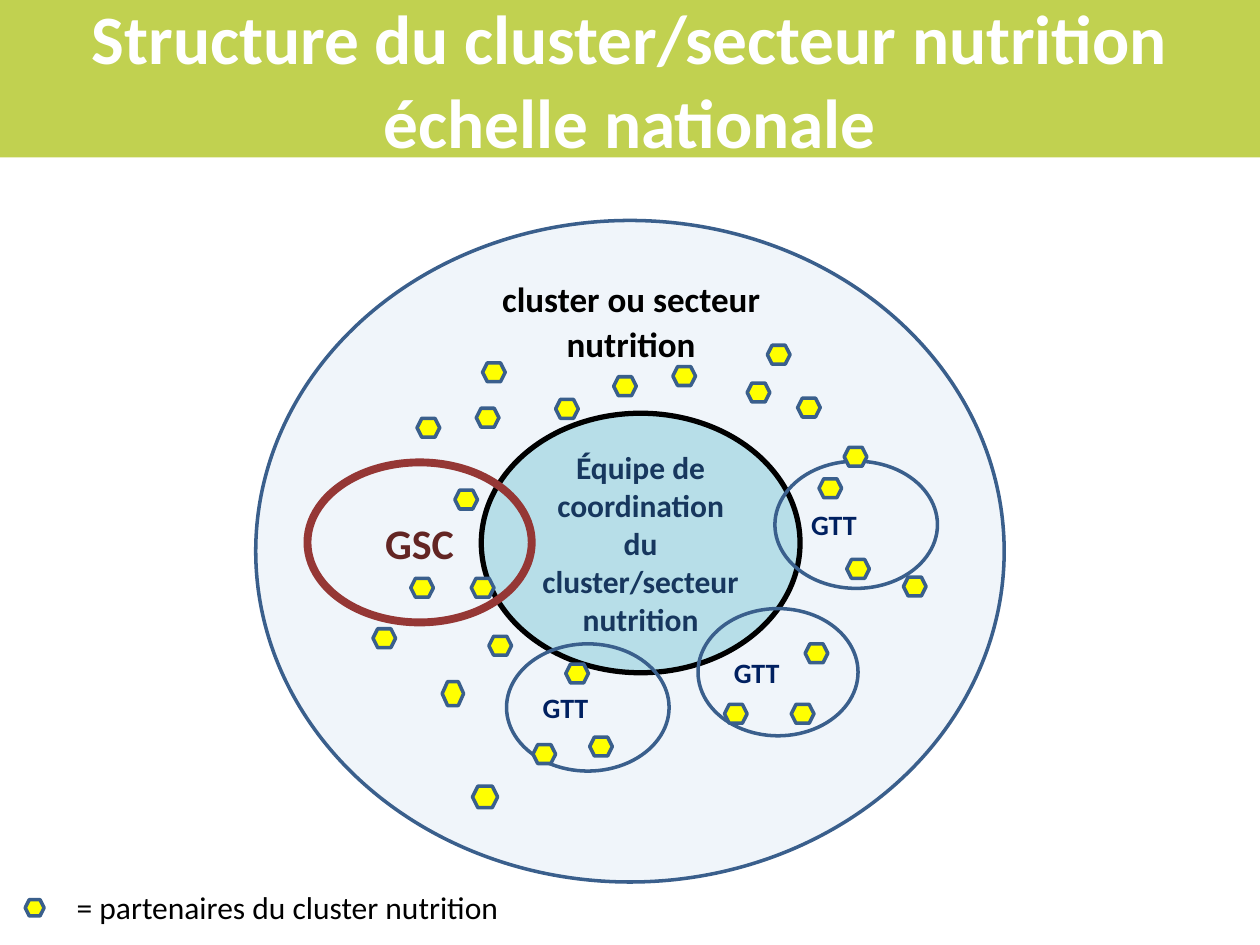
import pptx
import pptx.util
import pptx.dml.color
import pptx.enum.shapes
import pptx.enum.text
from pptx.util import Inches

COLORS = {
    "banner": "C1D150", "white": "FFFFFF", "black": "000000",
    "outline": "3A5F8C", "cluster": "F0F5FA", "team": "B7DEE8",
    "team_text": "17375E", "gsc": "953735", "gsc_text": "632523",
    "gtt_text": "002060", "partner": "FFFF00",
}
SHAPE = pptx.enum.shapes.MSO_SHAPE
ALIGN = pptx.enum.text.PP_ALIGN
ANCHOR = pptx.enum.text.MSO_ANCHOR

WORKING_GROUPS = [(4.02, 5.11, 1.29), (6.15, 3.66, 1.29), (5.54, 4.83, 1.27)]
PARTNERS = [
    (6.33, 3.16), (6.39, 5.11), (6.7, 3.55), (3.88, 5.05), (3.61, 3.89),
    (3.83, 2.88), (6.5, 3.8), (6.28, 5.59), (5.93, 3.04), (6.72, 4.44),
    (5.75, 5.59), (4.68, 5.85), (4.49, 5.27), (4.23, 5.91), (6.09, 2.74),
    (2.96, 4.99), (7.17, 4.58), (3.74, 4.59), (3.31, 3.32), (3.78, 3.24),
    (4.41, 3.17), (4.87, 2.99), (5.34, 2.91), (3.26, 4.59),
    (3.51, 5.41, 0.17, 0.19), (3.75, 6.24, 0.2, 0.17),
    (0.2, 7.14, 0.15, 0.13),
]


def rgb(name):
    return pptx.dml.color.RGBColor.from_string(COLORS[name])


def write(tf, text, size, color, align=ALIGN.CENTER, bold=True):
    p = tf.paragraphs[0]
    p.alignment = align
    r = p.add_run()
    r.text = text
    r.font.name = "Calibri"
    r.font.size = pptx.util.Pt(size)
    r.font.bold = bold
    r.font.color.rgb = rgb(color)
    return p


def add_outlined(s, kind, box, fill=None, line="outline", width=2):
    sp = s.shapes.add_shape(kind, *map(Inches, box))
    sp.shadow.inherit = False
    if fill:
        sp.fill.solid()
        sp.fill.fore_color.rgb = rgb(fill)
    else:
        sp.fill.background()
    sp.line.color.rgb = rgb(line)
    sp.line.width = pptx.util.Pt(width)
    sp.text_frame.word_wrap = True
    sp.text_frame.vertical_anchor = ANCHOR.MIDDLE
    return sp


def add_partner(s, left, top, width=0.18, height=0.15):
    add_outlined(s, SHAPE.HEXAGON, (left, top, width, height), "partner")


def add_label(s, box, text, size, align, bold, wrap):
    tf = s.shapes.add_textbox(*map(Inches, box)).text_frame
    tf.word_wrap = wrap
    return write(tf, text, size, "black", align, bold)


def format_title(s):
    sp = s.shapes.title
    sp.left, sp.top, sp.width, sp.height = map(Inches, (0, 0, 10, 1.25))
    sp.fill.solid()
    sp.fill.fore_color.rgb = rgb("banner")
    tf = sp.text_frame
    tf.word_wrap = True
    tf.auto_size = pptx.enum.text.MSO_AUTO_SIZE.NONE
    tf.vertical_anchor = ANCHOR.MIDDLE
    write(tf, "Structure du cluster/secteur nutrition échelle nationale", 39.6, "white")


def main():
    prs = pptx.Presentation()
    prs.slide_width, prs.slide_height = Inches(10), Inches(7.5)
    s = prs.slides.add_slide(prs.slide_layouts[5])
    format_title(s)

    add_outlined(s, SHAPE.OVAL, (2.03, 1.75, 5.94, 5.25), "cluster")
    team = add_outlined(s, SHAPE.OVAL, (3.82, 3.28, 2.53, 2.06), "team", "black", 3)
    write(team.text_frame, "Équipe de coordination du cluster/secteur nutrition", 18, "team_text")
    gsc = add_outlined(s, SHAPE.OVAL, (2.44, 3.67, 1.78, 1.27), None, "gsc", 4.5)
    write(gsc.text_frame, "GSC", 24, "gsc_text")

    p = add_label(s, (3.73, 2.13, 2.56, 0.89), "cluster ou secteur nutrition",
                  20, ALIGN.CENTER, True, True)
    p.line_spacing = 1.07
    p.space_after = pptx.util.Pt(8)

    for left, top, width in WORKING_GROUPS:
        gtt = add_outlined(s, SHAPE.OVAL, (left, top, width, 1.01))
        write(gtt.text_frame, "GTT", 16, "gtt_text", ALIGN.LEFT)
    for partner in PARTNERS:
        add_partner(s, *partner)

    add_label(s, (0.51, 7, 3.59, 0.4), "= partenaires du cluster nutrition",
              18, ALIGN.LEFT, False, False)
    prs.save("out.pptx")


if __name__ == "__main__":
    main()
